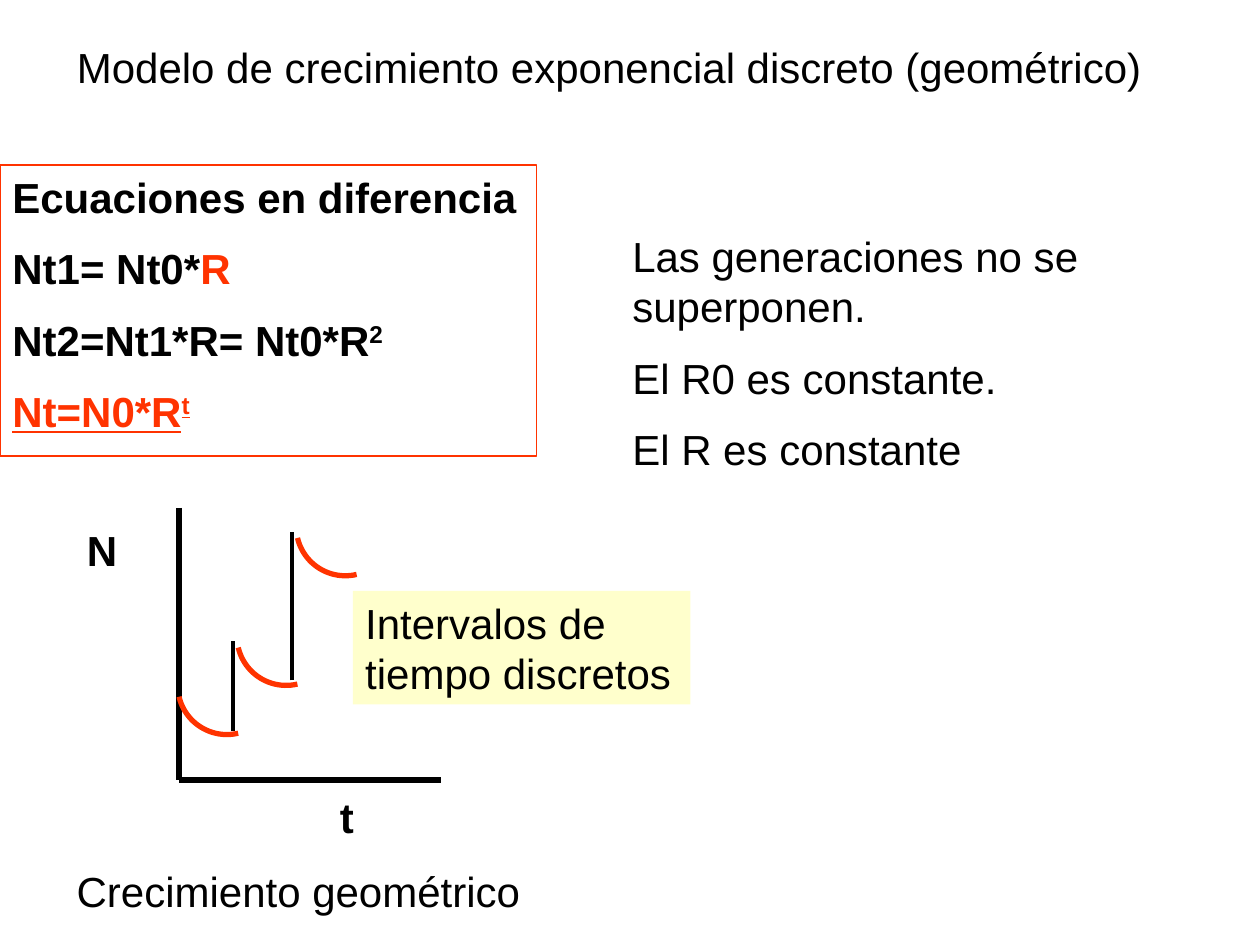
from pptx import Presentation
from pptx import util as u
from pptx.dml.color import RGBColor
from pptx.enum import shapes, text
from lxml import etree

THEME = {
    "font": "Arial", "size": 24, "gap": 12, "axis": 3, "step": 2.25, "edge": 0.75,
    "ink": RGBColor(0, 0, 0), "red": RGBColor(0xFF, 0x33, 0),
    "paper": RGBColor(0xFF, 0xFF, 0xFF), "note": RGBColor(0xFF, 0xFF, 0xCC),
}
A = "http://schemas.openxmlformats.org/drawingml/2006/main"

deck = Presentation()
deck.slide_width, deck.slide_height = u.Inches(10), u.Inches(7.5)
slide = deck.slides.add_slide(deck.slide_layouts[5])
parts = slide.shapes


def grid(*cells):
    """Turn cells of a 100 by 75 grid into lengths."""
    return [int(deck.slide_width * c / 100) for c in cells]


def write(words, box=None, shape=None, bold=False, fill=None, line=None):
    """Write paragraphs; each is a string or a list of (text, colour, style)."""
    if shape is None:
        if fill is None:
            shape = parts.add_textbox(*grid(*box))
        else:
            shape = parts.add_shape(shapes.MSO_SHAPE.RECTANGLE, *grid(*box))
            shape.shadow.inherit = False
            shape.fill.solid()
            shape.fill.fore_color.rgb = fill
            if line is None:
                shape.line.fill.background()
            else:
                shape.line.color.rgb = line
                shape.line.width = u.Pt(THEME["edge"])
    frame = shape.text_frame
    frame.word_wrap = True
    frame.auto_size = text.MSO_AUTO_SIZE.NONE
    frame.vertical_anchor = text.MSO_ANCHOR.TOP
    for i, part in enumerate(words):
        para = frame.add_paragraph() if i else frame.paragraphs[0]
        para.alignment = text.PP_ALIGN.LEFT
        para.space_before = u.Pt(THEME["gap"])
        runs = [(part, "ink", "")] if isinstance(part, str) else part
        for said, ink, style in runs:
            run = para.add_run()
            run.text = said
            font = run.font
            font.name, font.size = THEME["font"], u.Pt(THEME["size"])
            font.bold, font.color.rgb = bold, THEME[ink]
            if "under" in style:
                font.underline = True
            if "super" in style:
                run._r.get_or_add_rPr().set("baseline", "30000")


# Title
title = parts.title
title.left, title.top, title.width, title.height = grid(5.1, 2.8, 87.4, 5)
write(["Modelo de crecimiento exponencial discreto (geométrico)"], shape=title)

# Equations
write([
    "Ecuaciones en diferencia",
    [("Nt1= Nt0*", "ink", ""), ("R", "red", "")],
    [("Nt2=Nt1*R= Nt0*R", "ink", ""), ("2", "ink", "super")],
    [("Nt=N0*R", "red", "under"), ("t", "red", "under super")],
], box=(0, 13.1, 42.6, 23.1), bold=True, fill=THEME["paper"], line=THEME["red"])

# Axes and the jumps between generations
for x1, y1, x2, y2, width in [
    (14.2, 40.3, 14.2, 61.9, "axis"),
    (14.2, 61.9, 35, 61.9, "axis"),
    (18.5, 58, 18.5, 50.9, "step"),
    (23.2, 54, 23.2, 42.2, "step"),
]:
    rule = parts.add_connector(shapes.MSO_CONNECTOR.STRAIGHT, *grid(x1, y1, x2, y2))
    rule.line.color.rgb = THEME["ink"]
    rule.line.width = u.Pt(THEME[width])
    etree.SubElement(rule._element.spPr, f"{{{A}}}effectLst")

# Decline within each generation: quarter circles
radius = 3.9
for i, y in enumerate([54.4, 50.5, 41.8]):
    x = 18 + 4.7 * i
    arc = parts.add_shape(shapes.MSO_SHAPE.ARC,
                          *grid(x - radius, y - radius, 2 * radius, 2 * radius))
    arc.rotation = 166.7
    arc.shadow.inherit = False
    arc.fill.background()
    arc.line.color.rgb = THEME["red"]
    arc.line.width = u.Pt(THEME["axis"])

# Graph labels
write(["N"], box=(5.9, 41.1, 5.8, 5), bold=True)
write(["t"], box=(26, 62.3, 6.7, 5), bold=True)
write(["Crecimiento geométrico"], box=(5.1, 68.2, 41.7, 5))
write(["Intervalos de tiempo discretos"], box=(28, 46.9, 26.8, 9), fill=THEME["note"])

# Assumptions
write(["Las generaciones no se superponen.", "El R0 es constante.",
       "El R es constante"], box=(49.2, 17.8, 45.3, 21))

deck.save("out.pptx")
